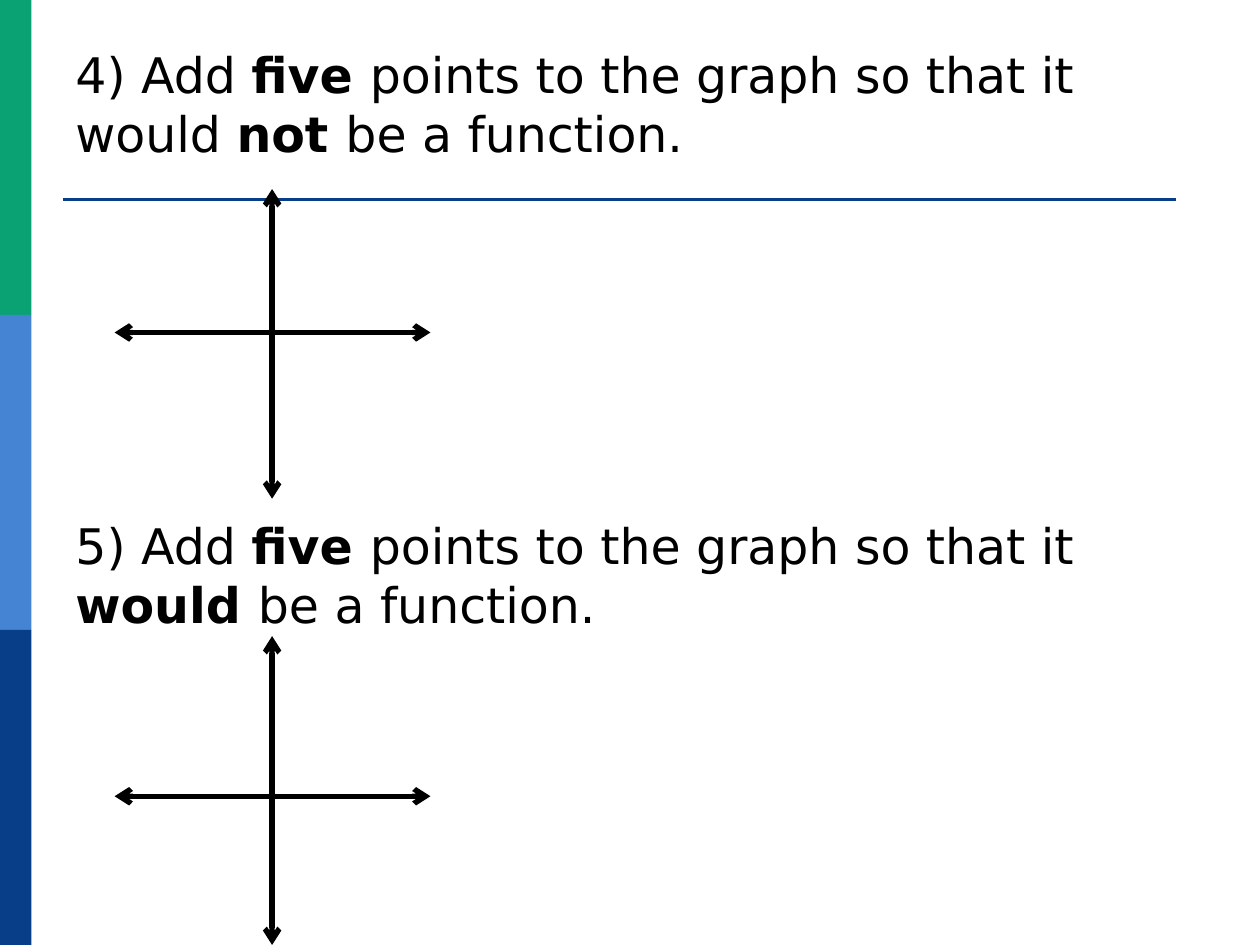
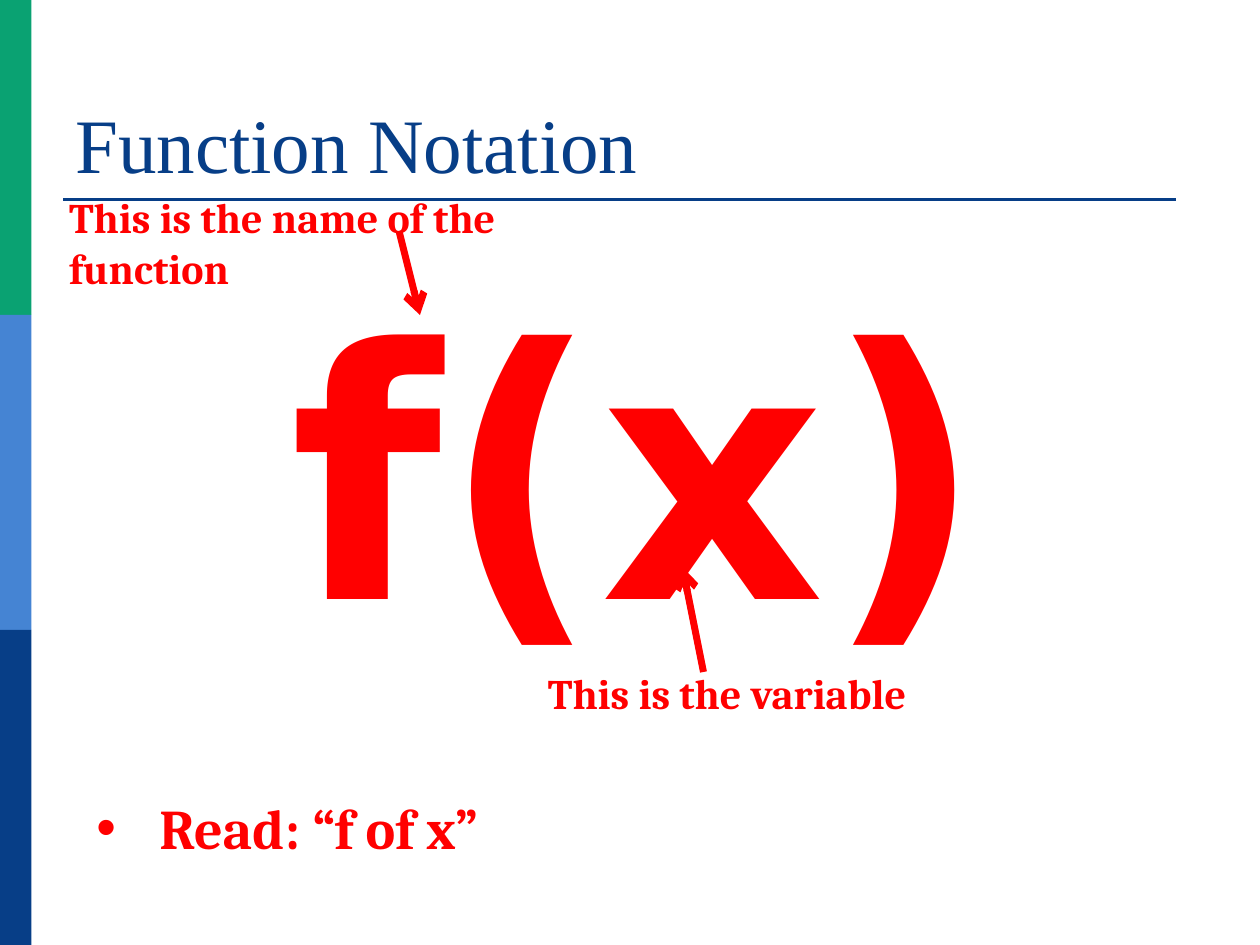
from lxml.etree import SubElement
from pptx import Presentation
from pptx.dml.color import RGBColor
from pptx.enum.shapes import MSO_CONNECTOR, MSO_SHAPE
from pptx.enum.text import MSO_ANCHOR, PP_ALIGN
from pptx.oxml.ns import qn
from pptx.util import Pt

GREEN = RGBColor(0x0A, 0xA2, 0x72)
SKY = RGBColor(0x45, 0x84, 0xD3)
NAVY = RGBColor(0x07, 0x3E, 0x87)
BLACK = RGBColor(0, 0, 0)
RED = RGBColor(0xFF, 0, 0)

TITLE = {"name": "Times New Roman", "size": Pt(44), "color": NAVY}
QUESTION = {"name": "DejaVu Sans", "size": Pt(28), "color": BLACK}
FORMULA = {"name": "DejaVu Sans", "size": Pt(199), "color": RED, "bold": True}
LABEL = {"name": "Cambria", "size": Pt(24), "color": RED, "bold": True}
READING = {**LABEL, "size": Pt(32)}


def add_text(slide, box, runs, style, anchor=MSO_ANCHOR.TOP):
    """Add one paragraph of (text, bold) runs; bold None keeps the style."""
    shape = slide.shapes.add_textbox(*map(Pt, box))
    shape.text_frame.word_wrap = True
    shape.text_frame.vertical_anchor = anchor
    paragraph = shape.text_frame.paragraphs[0]
    for text, bold in runs:
        run = paragraph.add_run()
        run.text = text
        values = style if bold is None else {**style, "bold": bold}
        for key, value in values.items():
            if key == "color":
                run.font.color.rgb = value
            else:
                setattr(run.font, key, value)
    return paragraph


def add_line(slide, ends, color, width, arrows=()):
    """Add a straight line; arrows names its pointed ends."""
    connector = slide.shapes.add_connector(MSO_CONNECTOR.STRAIGHT, *map(Pt, ends))
    connector.line.color.rgb = color
    connector.line.width = Pt(width)
    for end in arrows:
        SubElement(connector.line._get_or_add_ln(), qn(f"a:{end}"), type="arrow")
    SubElement(connector._element.spPr, qn("a:effectLst"))


presentation = Presentation()
presentation.slide_width, presentation.slide_height = Pt(720), Pt(540)

# Shared side bands and title rule
slides = []
for _ in range(2):
    slide = presentation.slides.add_slide(presentation.slide_layouts[6])
    for index, color in enumerate((GREEN, SKY, NAVY)):
        band = slide.shapes.add_shape(
            MSO_SHAPE.RECTANGLE, 0, Pt(180 * index), Pt(18), Pt(180))
        band.shadow.inherit = False
        band.fill.solid()
        band.fill.fore_color.rgb = color
        band.line.fill.background()
    add_line(slide, (36, 114, 672, 114), NAVY, 1.5)
    slides.append(slide)
graph_slide, notation_slide = slides

# Slide 1: two questions, each with empty axes
questions = [
    (22, (108, 285), 190,
     [("4) Add ", False), ("five ", True),
      ("points to the graph so that it would ", False),
      ("not ", True), ("be a function.", False)]),
    (291, (363.5, 540), 455,
     [("5) Add ", False), ("five ", True),
      ("points to the graph so that it ", False),
      ("would ", True), ("be a function.", False)]),
]
for text_top, (axis_top, axis_bottom), axis_middle, runs in questions:
    add_text(graph_slide, (36, text_top, 588, 80), runs, QUESTION)
    for ends in ((155.5, axis_top, 155.5, axis_bottom),
                 (65.5, axis_middle, 246, axis_middle)):
        add_line(graph_slide, ends, BLACK, 3, ("headEnd", "tailEnd"))

# Slide 2: title and formula
add_text(notation_slide, (36, 21.6, 648, 90), [("Function Notation", None)],
         TITLE, MSO_ANCHOR.BOTTOM)
formula = add_text(notation_slide, (44.6, 140, 639.4, 300), [("f(x)", None)], FORMULA)
formula.alignment = PP_ALIGN.CENTER

# Labels and the arrows that point from them into the formula
labels = [
    ("This is the name of the function", (32.4, 106), (228, 132, 240, 180)),
    ("This is the variable", (306, 378), (402, 384, 390, 324)),
]
for text, (left, top), ends in labels:
    add_text(notation_slide, (left, top, 348, 36), [(text, None)], LABEL)
    add_line(notation_slide, ends, RED, 4, ("tailEnd",))

# Bulleted reading
reading = add_text(notation_slide, (48, 450, 432, 46), [("Read: “f of x”", None)], READING)
properties = reading._p.get_or_add_pPr()
properties.set("marL", str(Pt(36)))
properties.set("indent", str(Pt(-36)))
SubElement(properties, qn("a:buFont"), typeface="Arial")
SubElement(properties, qn("a:buChar"), char="•")

presentation.save("out.pptx")
